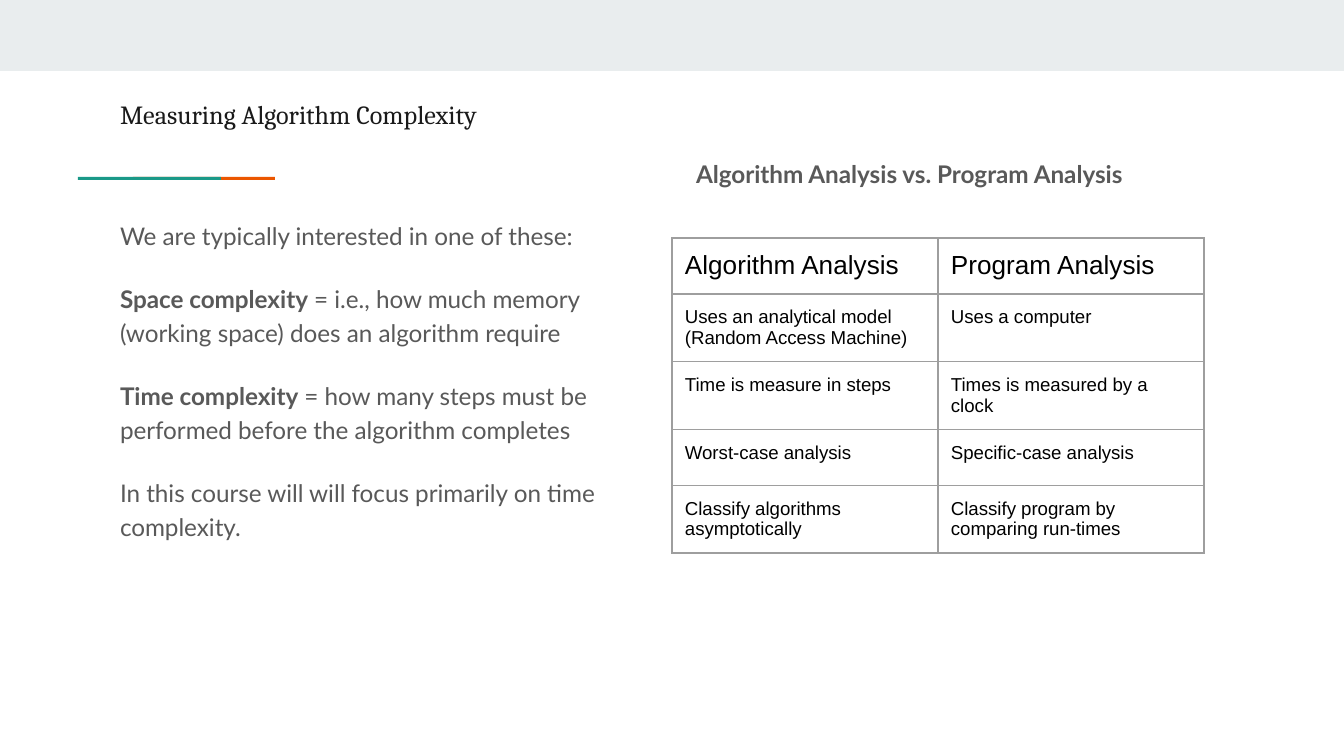
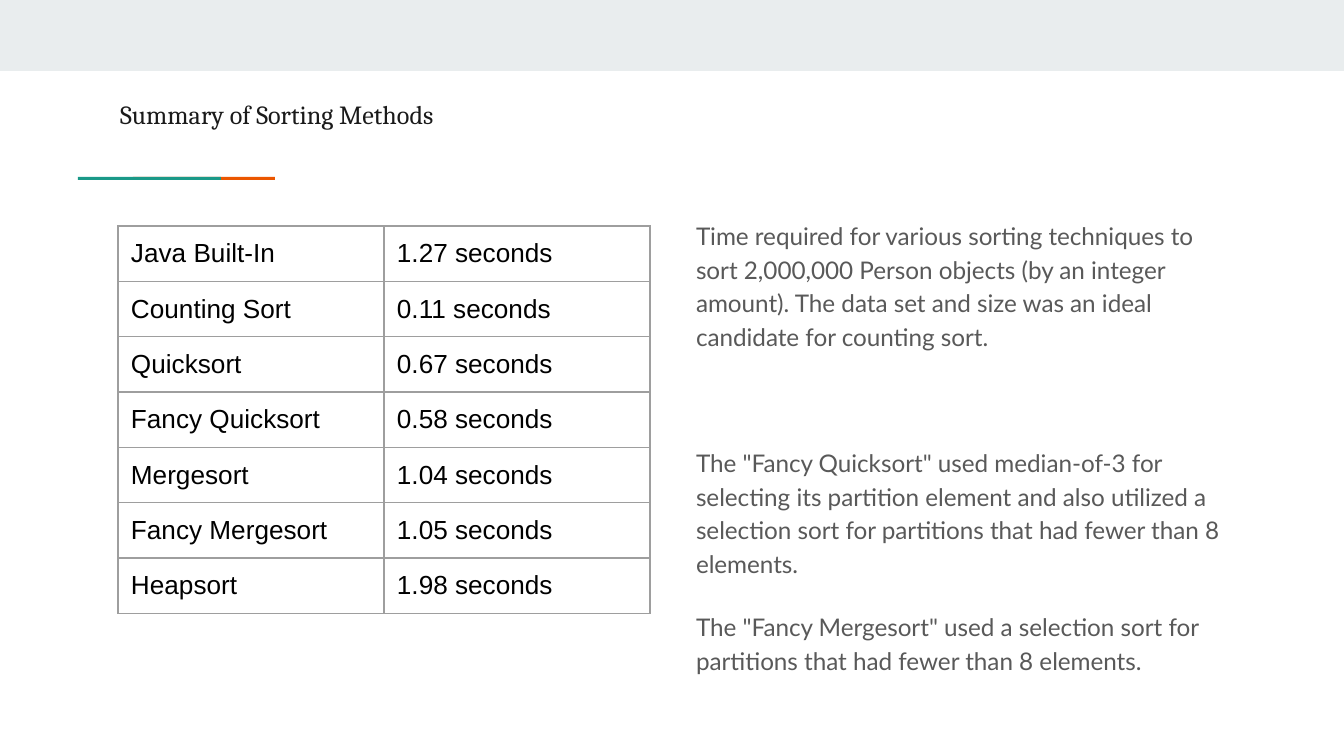
from pptx import Presentation
from pptx.dml.color import RGBColor
from pptx.enum.shapes import MSO_SHAPE as Shape
from pptx.enum.text import MSO_ANCHOR as Anchor, MSO_AUTO_SIZE as AutoSize, PP_ALIGN as Align
from pptx.oxml.ns import qn
from pptx.util import Emu, Pt
from lxml.etree import SubElement

# Shared look: lengths in px, 134.4 px to the inch
SCALE = 914400 / 134.4
PAGE_WIDTH, PAGE_HEIGHT = 1344, 756
INSET = 13
COLOURS = {"band": "E9EDEE", "orange": "EB5600", "teal": "1A9988", "grid": "9E9E9E"}
TITLE_FONT = {"name": "Cambria", "size": Pt(14), "bold": False, "colour": "1A1A1A"}
BODY_FONT = {"name": "Lato", "size": Pt(13), "bold": False, "colour": "595959"}
HEAD_FONT = {"name": "Arial", "size": Pt(14), "bold": False, "colour": "000000"}
CELL_FONT = {**HEAD_FONT, "size": Pt(10)}

TITLE_BOX = (107, 85, 1130, 79)
LEFT_BOX = (107, 204, 555, 433)
RIGHT_BOX = (683, 204, 555, 433)
HEADING_BOX = (683, 142, 555, 56)
COLUMN_WIDTH = 266
GAP = 16

# Content: a paragraph is (space before in points, [(text, bold), ...])
MEASURING = [
    (0, [("We are typically interested in one of these:", False)]),
    (GAP, [("Space complexity", True),
           (" = i.e., how much memory (working space) does an algorithm require", False)]),
    (GAP, [("Time complexity", True),
           (" = how many steps must be performed before the algorithm completes", False)]),
    (GAP, [("In this course will will focus primarily on time complexity.", False)]),
]
HEADING = [(0, [("Algorithm Analysis vs. Program Analysis", True)])]
ANALYSIS = [
    ("Algorithm Analysis", "Program Analysis"),
    ("Uses an analytical model (Random Access Machine)", "Uses a computer"),
    ("Time is measure in steps", "Times is measured by a clock"),
    ("Worst-case analysis", "Specific-case analysis"),
    ("Classify algorithms asymptotically", "Classify program by comparing run-times"),
]
SORTING = [
    (0, [("Time required for various sorting techniques to sort 2,000,000 Person objects "
          "(by an integer amount). The data set and size was an ideal candidate for "
          "counting sort.", False)]),
    (50, [('The "Fancy Quicksort" used median-of-3 for selecting its partition element and '
           "also utilized a selection sort for partitions that had fewer than 8 elements.", False)]),
    (GAP, [('The "Fancy Mergesort" used a selection sort for partitions that had fewer than '
            "8 elements.", False)]),
]
TIMES = [
    ("Java Built-In", "1.27 seconds"),
    ("Counting Sort", "0.11 seconds"),
    ("Quicksort", "0.67 seconds"),
    ("Fancy Quicksort", "0.58 seconds"),
    ("Mergesort", "1.04 seconds"),
    ("Fancy Mergesort", "1.05 seconds"),
    ("Heapsort", "1.98 seconds"),
]


def px(length):
    return Emu(round(length * SCALE))


def colour(hex_string):
    return RGBColor.from_string(hex_string)


def set_values(target, values):
    for name, value in values.items():
        setattr(target, name, value)


def add_span(para, text, font, **changes):
    values = {**font, **changes}
    span = para.add_run()
    span.text = text
    span.font.color.rgb = colour(values.pop("colour"))
    set_values(span.font, values)


def place_holder(holder, box):
    """Move a placeholder to its box and return its text frame."""
    set_values(holder, dict(zip(("left", "top", "width", "height"), map(px, box))))
    frame = holder.text_frame
    margins = dict.fromkeys(("margin_left", "margin_top", "margin_right", "margin_bottom"), px(INSET))
    set_values(frame, {**margins, "word_wrap": True, "auto_size": AutoSize.NONE,
                       "vertical_anchor": Anchor.TOP})
    return frame


def add_bar(page, box, fill):
    bar = page.shapes.add_shape(Shape.RECTANGLE, *map(px, box))
    bar.shadow.inherit = False
    bar.fill.solid()
    bar.fill.fore_color.rgb = colour(fill)
    bar.line.fill.background()


def add_page(deck, layout, title):
    """Start a page with the top band, the two-colour rule and the title."""
    page = deck.slides.add_slide(deck.slide_layouts.get_by_name(layout))
    add_bar(page, (0, 0, PAGE_WIDTH, 71), COLOURS["band"])
    add_bar(page, (133, 177, 142, 3), COLOURS["orange"])
    add_bar(page, (78, 177, 143, 3), COLOURS["teal"])
    para = place_holder(page.shapes.title, TITLE_BOX).paragraphs[0]
    para.alignment = Align.LEFT
    add_span(para, title, TITLE_FONT)
    return page


def fill_body(holder, box, paragraphs):
    frame = place_holder(holder, box)
    for index, (before, spans) in enumerate(paragraphs):
        para = frame.add_paragraph() if index else frame.paragraphs[0]
        set_values(para, {"alignment": Align.LEFT, "line_spacing": 1.15,
                          "space_before": Pt(before), "space_after": Pt(0)})
        # Plain text: no bullet, no hanging indent
        properties = para._p.get_or_add_pPr()
        properties.set("marL", "0")
        properties.set("indent", "0")
        SubElement(properties, qn("a:buNone"))
        for text, bold in spans:
            add_span(para, text, BODY_FONT, bold=bold)


def format_cell(cell, text, font):
    properties = cell._tc.get_or_add_tcPr()
    for side in ("lnL", "lnR", "lnT", "lnB"):
        line = SubElement(properties, qn(f"a:{side}"), w=str(Pt(0.75)))
        fill = SubElement(line, qn("a:solidFill"))
        SubElement(fill, qn("a:srgbClr"), val=COLOURS["grid"])
    cell.fill.background()
    set_values(cell, dict.fromkeys(
        ("margin_left", "margin_top", "margin_right", "margin_bottom"), px(INSET)))
    add_span(cell.text_frame.paragraphs[0], text, font)


def add_grid(page, left, top, row_height, rows, first_font, other_font):
    """Draw a bordered table with equal columns and rows."""
    columns = len(rows[0])
    box = (left, top, columns * COLUMN_WIDTH, len(rows) * row_height)
    table = page.shapes.add_table(len(rows), columns, *map(px, box)).table
    set_values(table, {"first_row": False, "horz_banding": False})
    for column in table.columns:
        column.width = px(COLUMN_WIDTH)
    for row_index, row in enumerate(rows):
        table.rows[row_index].height = px(row_height)
        for column_index, text in enumerate(row):
            format_cell(table.cell(row_index, column_index), text,
                        other_font if row_index else first_font)


def add_measuring_page(deck):
    page = add_page(deck, "Two Content", "Measuring Algorithm Complexity")
    fill_body(page.placeholders[1], LEFT_BOX, MEASURING)
    fill_body(page.placeholders[2], HEADING_BOX, HEADING)
    add_grid(page, 672, 238, 56, ANALYSIS, HEAD_FONT, CELL_FONT)


def add_sorting_page(deck):
    page = add_page(deck, "Title and Content", "Summary of Sorting Methods")
    fill_body(page.placeholders[1], RIGHT_BOX, SORTING)
    add_grid(page, 118, 226, 42, TIMES, HEAD_FONT, HEAD_FONT)


def main():
    deck = Presentation()
    set_values(deck, {"slide_width": px(PAGE_WIDTH), "slide_height": px(PAGE_HEIGHT)})
    add_measuring_page(deck)
    add_sorting_page(deck)
    deck.save("out.pptx")


if __name__ == "__main__":
    main()
